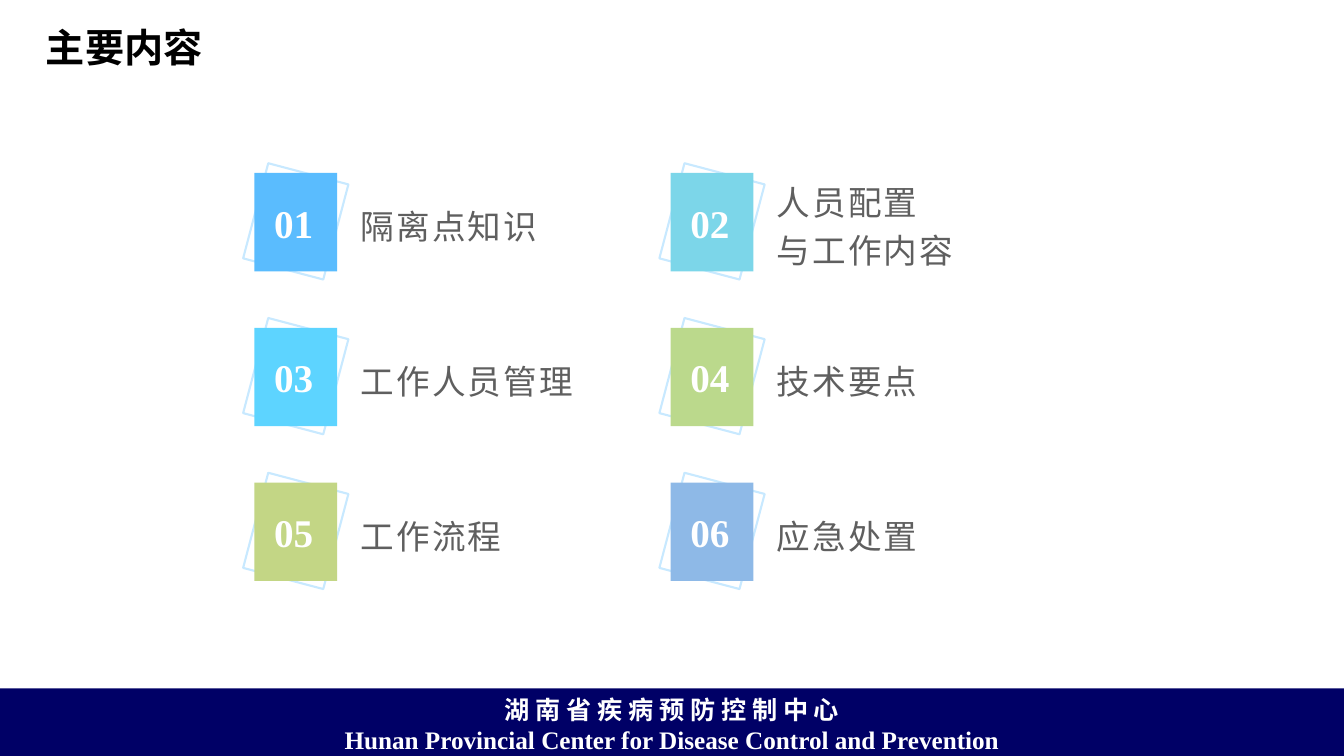
from lxml.etree import SubElement
from pptx import Presentation
from pptx.dml.color import RGBColor
from pptx.enum.shapes import MSO_SHAPE
from pptx.enum.text import MSO_ANCHOR, PP_ALIGN
from pptx.oxml.ns import qn
from pptx.util import Cm, Pt

HEADING_FONT = "Noto Sans CJK SC"
NUMBER_FONT = "Times New Roman"
TOPICS = [
    ("隔离点知识", "5ABCFE"),
    ("人员配置\n与工作内容", "7CD6E9"),
    ("工作人员管理", "5DD4FF"),
    ("技术要点", "BBD98C"),
    ("工作流程", "C3D685"),
    ("应急处置", "8EB9E7"),
]
COLUMNS = 2
GRID_LEFT, GRID_TOP = 6.41, 4.36
COLUMN_STEP, ROW_STEP = 10.49, 3.9
TILE_WIDTH, TILE_HEIGHT = 2.09, 2.48


def color(hex_string):
    return RGBColor.from_string(hex_string)


def add_rectangle(slide, left, top, width, height, fill=None, line=None):
    shape = slide.shapes.add_shape(
        MSO_SHAPE.RECTANGLE, Cm(left), Cm(top), Cm(width), Cm(height))
    shape.shadow.inherit = False
    if fill:
        shape.fill.solid()
        shape.fill.fore_color.rgb = color(fill)
    else:
        shape.fill.background()
    if line:
        shape.line.color.rgb = color(line)
        shape.line.width = Pt(1.5)
    else:
        shape.line.fill.background()
    return shape


def style_paragraph(paragraph, font_name, size, font_color, bold=False):
    font = paragraph.font
    font.name = font_name
    font.size = Pt(size)
    font.bold = bold
    font.color.rgb = color(font_color)
    for run in paragraph.runs:
        east_asian = SubElement(run.font._element, qn("a:ea"))
        east_asian.set("typeface", HEADING_FONT)


def add_text(slide, left, top, width, height, text, wrap=True,
             anchor=MSO_ANCHOR.MIDDLE):
    box = slide.shapes.add_textbox(Cm(left), Cm(top), Cm(width), Cm(height))
    frame = box.text_frame
    frame.word_wrap = wrap
    frame.vertical_anchor = anchor
    frame.text = text
    return frame.paragraphs


def add_topic(slide, number, label, tile_color, left, top):
    frame = add_rectangle(slide, left, top - 0.02, TILE_WIDTH, TILE_HEIGHT,
                          line="C8E9FF")
    frame.rotation = 14.8
    add_rectangle(slide, left, top, TILE_WIDTH, TILE_HEIGHT, fill=tile_color)
    for paragraph in add_text(slide, left + 0.25, top + 0.53, 1.57, 1.4,
                              f"{number:02d}", False, MSO_ANCHOR.TOP):
        style_paragraph(paragraph, NUMBER_FONT, 28, "FFFFFF", bold=True)
    for paragraph in add_text(slide, left + 2.43, top - 0.13, 6.25, 2.74, label):
        paragraph.line_spacing = 1.2
        style_paragraph(paragraph, "Arial", 24, "5F5F5F")
        for run in paragraph.runs:
            run.font._element.set("spc", "150")


def add_footer(slide):
    band = add_rectangle(slide, 0, 17.35, 33.87, 1.8, fill="000066")
    frame = band.text_frame
    frame.vertical_anchor = MSO_ANCHOR.MIDDLE
    frame.text = ("湖 南 省 疾 病 预 防 控 制 中 心\n"
                  "Hunan Provincial Center for Disease Control and Prevention")
    for paragraph, font_name in zip(frame.paragraphs, (HEADING_FONT, NUMBER_FONT)):
        paragraph.alignment = PP_ALIGN.CENTER
        style_paragraph(paragraph, font_name, 18, "FFFFFF", bold=True)


def main():
    presentation = Presentation()
    presentation.slide_width, presentation.slide_height = Cm(33.87), Cm(19.05)
    slide = presentation.slides.add_slide(presentation.slide_layouts[6])
    add_footer(slide)
    for index, (label, tile_color) in enumerate(TOPICS):
        row, column = divmod(index, COLUMNS)
        add_topic(slide, index + 1, label, tile_color,
                  GRID_LEFT + column * COLUMN_STEP, GRID_TOP + row * ROW_STEP)
    for paragraph in add_text(slide, 0.91, 0.2, 31.19, 1.98, "主要内容"):
        style_paragraph(paragraph, HEADING_FONT, 28, "000000", bold=True)
    presentation.save("out.pptx")


if __name__ == "__main__":
    main()
